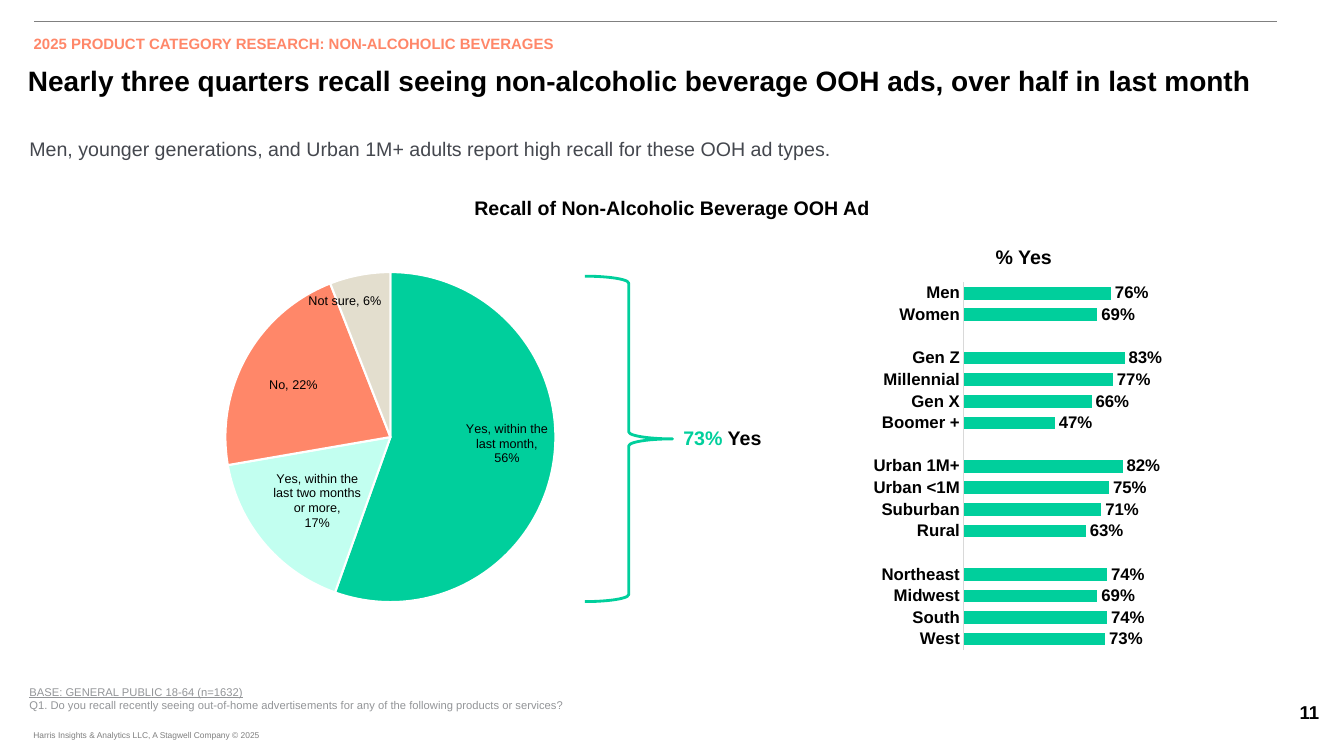
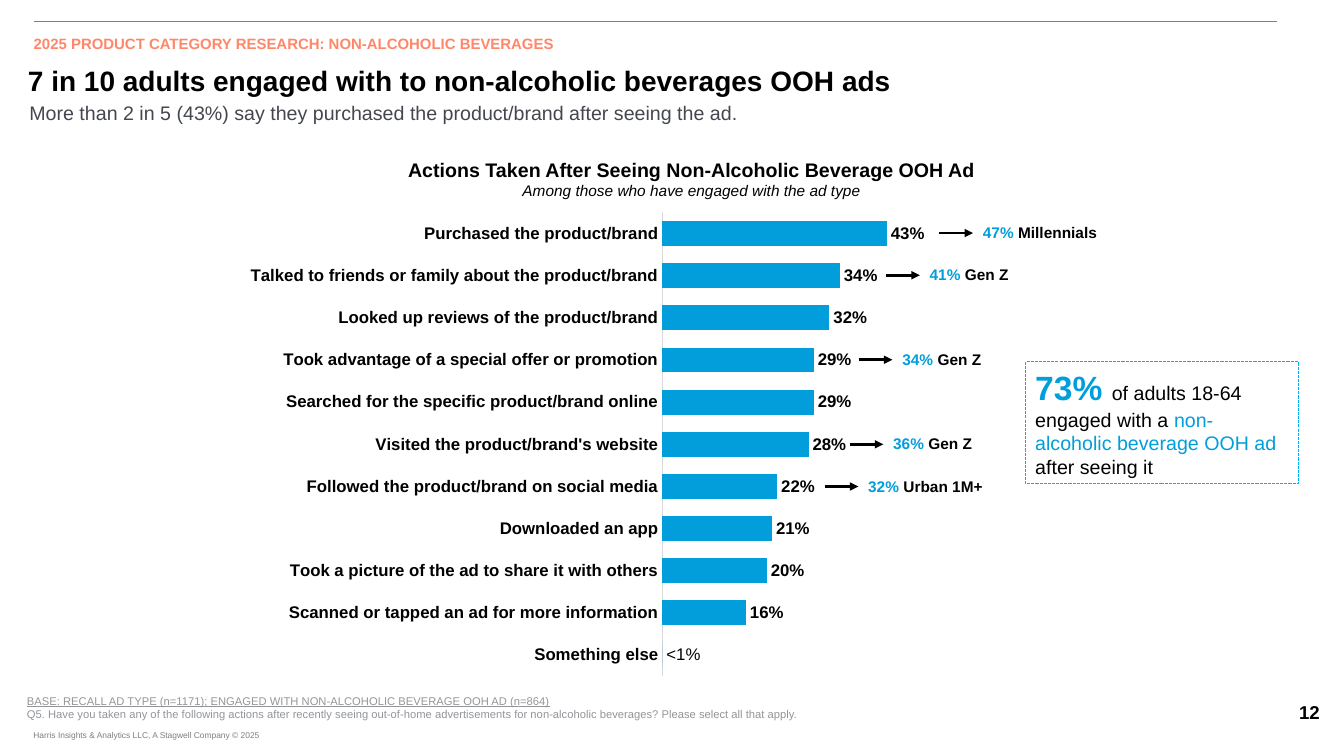
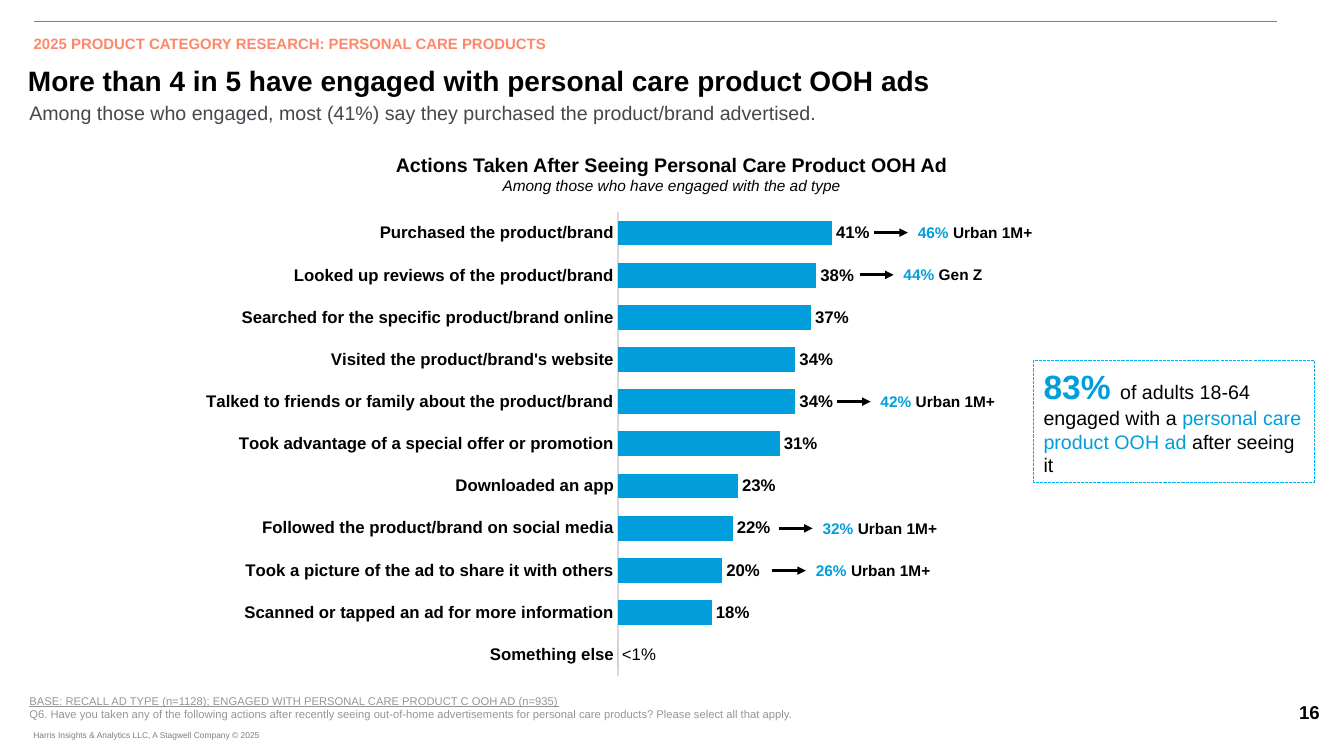
import pptx
import pptx.chart.data
import pptx.dml.color
import pptx.enum.chart
import pptx.enum.dml
import pptx.enum.shapes
import pptx.enum.text
import pptx.oxml
import pptx.oxml.ns
import pptx.util

Cm = pptx.util.Cm
Pt = pptx.util.Pt
RGBColor = pptx.dml.color.RGBColor
Align = pptx.enum.text.PP_ALIGN
Anchor = pptx.enum.text.MSO_ANCHOR
ChartType = pptx.enum.chart.XL_CHART_TYPE
LabelPosition = pptx.enum.chart.XL_LABEL_POSITION
Shape = pptx.enum.shapes.MSO_SHAPE

BLACK = RGBColor(0x00, 0x00, 0x00)
WHITE = RGBColor(0xFF, 0xFF, 0xFF)
SLATE = RGBColor(0x44, 0x47, 0x4E)
NOTE_GRAY = RGBColor(0x93, 0x95, 0x98)
FOOTER_GRAY = RGBColor(0x7F, 0x7F, 0x7F)
RULE_GRAY = RGBColor(0x80, 0x80, 0x80)
AXIS_GRAY = RGBColor(0xD9, 0xD9, 0xD9)
CORAL = RGBColor(0xFF, 0x87, 0x69)
GREEN = RGBColor(0x00, 0xCF, 0x9C)
MINT = RGBColor(0xC2, 0xFF, 0xF0)
SAND = RGBColor(0xE3, 0xDE, 0xCE)
BLUE = RGBColor(0x01, 0x9E, 0xDB)
BORDER_BLUE = RGBColor(0x00, 0xB0, 0xF0)

BASE = {"name": "Arial", "size": Pt(12), "bold": False, "color": BLACK}
TITLE = {"size": Pt(20), "bold": True}
KICKER = {"size": Pt(10.7), "bold": True, "color": CORAL}
SUBTITLE = {"size": Pt(14), "color": SLATE}
HEADING = {"size": Pt(14), "bold": True}
SUBHEADING = {"size": Pt(11), "italic": True}
NOTE = {"size": Pt(8), "color": NOTE_GRAY}
FOOTER = {"size": Pt(6), "color": FOOTER_GRAY}
NUMBER = {"size": Pt(13.3), "bold": True}
CHART_TEXT = {"bold": True}
PIE_TEXT = {"size": Pt(9)}
ARROW_TEXT = {"size": Pt(11), "bold": True}
BODY = {"size": Pt(14)}
BIG = {"size": Pt(24), "bold": True, "color": BLUE}


def format_font(font, formats):
    for key, value in {**BASE, **formats}.items():
        if key == "color":
            font.color.rgb = value
        else:
            setattr(font, key, value)


def manual_layout(**values):
    parts = "".join(f'<c:{key} val="{value}"/>' for key, value in values.items())
    return pptx.oxml.parse_xml(
        f'<c:layout {pptx.oxml.ns.nsdecls("c")}><c:manualLayout>{parts}</c:manualLayout></c:layout>')


class Report:
    def __init__(self):
        self.deck = pptx.Presentation()
        self.deck.slide_width, self.deck.slide_height = Cm(33.87), Cm(19.05)
        self.page = None

    def start_page(self, number, kicker, title, subtitle, subtitle_top):
        self.page = self.deck.slides.add_slide(self.deck.slide_layouts[5])
        heading = self.page.shapes.title
        heading.left, heading.top, heading.width, heading.height = map(Cm, (0.45, 1.52, 31.85, 1))
        self.fill_text(heading, [[(title, TITLE)]], anchor=Anchor.MIDDLE)
        self.line(0.86, 0.55, 32.18, 0.55, RULE_GRAY, 0.5)
        self.text((0.6, 0.74, 16.8, 0.71), [[(kicker, KICKER)]], anchor=Anchor.MIDDLE)
        self.text((0.49, subtitle_top, 31.67, 0.94), [[(subtitle, SUBTITLE)]])
        self.text((32.15, 17.53, 1.7, 0.84), [[(number, NUMBER)]], align=Align.CENTER)
        self.text((0.59, 18.27, 8, 0.51),
                  [[("Harris Insights & Analytics LLC, A Stagwell Company © 2025", FOOTER)]])

    def fill_text(self, box, paragraphs, align=Align.LEFT, anchor=Anchor.TOP):
        frame = box.text_frame
        settings = {"word_wrap": True, "auto_size": pptx.enum.text.MSO_AUTO_SIZE.NONE,
                    "vertical_anchor": anchor}
        for key, value in settings.items():
            setattr(frame, key, value)
        for index, spans in enumerate(paragraphs):
            para = frame.add_paragraph() if index else frame.paragraphs[0]
            para.alignment = align
            for words, formats in spans:
                span = para.add_run()
                span.text = words
                format_font(span.font, formats)

    def text(self, place, paragraphs, **settings):
        box = self.page.shapes.add_textbox(*map(Cm, place))
        self.fill_text(box, paragraphs, **settings)
        return box

    def heading(self, place, *paragraphs):
        self.text(place, [[item] for item in paragraphs], align=Align.CENTER)

    def notes(self, left, top, base, question):
        self.text((left, top, 32.8, 0.94),
                  [[(base, {**NOTE, "underline": True})], [(question, NOTE)]])

    def line(self, left, top, right, bottom, color, width):
        connector = self.page.shapes.add_connector(
            pptx.enum.shapes.MSO_CONNECTOR.STRAIGHT, *map(Cm, (left, top, right, bottom)))
        connector.line.color.rgb = color
        connector.line.width = Pt(width)
        connector._element.spPr.append(
            pptx.oxml.parse_xml(f'<a:effectLst {pptx.oxml.ns.nsdecls("a")}/>'))
        return connector

    def arrow_label(self, left, middle, share, group):
        end = left + 0.85
        box = self.text((end, middle - 0.37, 4.93, 0.74),
                        [[(share + " ", {**ARROW_TEXT, "color": BLUE}), (group, ARROW_TEXT)]])
        arrow = self.line(left, middle, end, middle, BLACK, 2)
        arrow.end_connect(box, 1)
        arrow.line._get_or_add_ln().append(
            pptx.oxml.parse_xml(f'<a:tailEnd {pptx.oxml.ns.nsdecls("a")} type="triangle"/>'))

    def outline(self, kind, place, color, width):
        shape = self.page.shapes.add_shape(kind, *map(Cm, place))
        shape.shadow.inherit = False
        shape.fill.background()
        shape.line.color.rgb = color
        shape.line.width = Pt(width)
        return shape

    def brace(self, place):
        shape = self.outline(Shape.RIGHT_BRACE, place, GREEN, 2)
        shape.adjustments[0], shape.adjustments[1] = 0.08, 0.5

    def callout(self, place, share, ad_type):
        shape = self.outline(Shape.RECTANGLE, place, BORDER_BLUE, 0.75)
        shape.line.dash_style = pptx.enum.dml.MSO_LINE.SQUARE_DOT
        shape.line._get_or_add_ln().set("cap", "sq")
        self.fill_text(shape, [[
            (share + " ", BIG), ("of adults 18-64 engaged with a ", BODY),
            (ad_type + " ", {**BODY, "color": BLUE}), ("after seeing it", BODY)]],
            anchor=Anchor.MIDDLE)

    def chart(self, kind, place, categories, values, plot_area):
        data = pptx.chart.data.CategoryChartData(number_format="0%")
        data.categories = categories
        data.add_series("Series 1", values)
        chart = self.page.shapes.add_chart(kind, *map(Cm, place), data).chart
        chart.has_title = chart.has_legend = False
        format_font(chart.font, CHART_TEXT)
        area = chart._chartSpace.xpath("c:chart/c:plotArea")[0]
        for blank in area.xpath("c:layout | .//c:cat//c:pt[not(string(c:v))]"):
            blank.getparent().remove(blank)
        left, top, width, height = plot_area
        area.insert(0, manual_layout(layoutTarget="inner", xMode="edge", yMode="edge",
                                     x=left, y=top, w=width, h=height))
        return chart

    def labels(self, series, position, formats, show_category=False):
        labels = series.data_labels
        settings = {"show_value": True, "show_category_name": show_category,
                    "number_format": "0%", "number_format_is_linked": False,
                    "position": position}
        for key, value in settings.items():
            setattr(labels, key, value)
        format_font(labels.font, formats)

    def point_label(self, point, words, position, formats):
        label = point.data_label
        label.text_frame.text = words
        for para in label.text_frame.paragraphs:
            for span in para.runs:
                format_font(span.font, formats)
        label.position = position

    def bars(self, place, rows, color, plot_area, maximum, reverse=False):
        categories, values = zip(*rows)
        chart = self.chart(ChartType.BAR_CLUSTERED, place, categories, values, plot_area)
        plot = chart.plots[0]
        plot.gap_width, plot.vary_by_categories = 70, False
        fill = plot.series[0].format.fill
        fill.solid()
        fill.fore_color.rgb = color
        self.labels(plot.series[0], LabelPosition.OUTSIDE_END, CHART_TEXT)
        axis = chart.category_axis
        axis.reverse_order = reverse
        axis.has_major_gridlines = False
        axis.major_tick_mark = axis.minor_tick_mark = pptx.enum.chart.XL_TICK_MARK.NONE
        axis.format.line.color.rgb = AXIS_GRAY
        axis.format.line.width = Pt(0.75)
        format_font(axis.tick_labels.font, CHART_TEXT)
        scale = chart.value_axis
        scale.minimum_scale, scale.maximum_scale = 0, maximum
        scale.has_major_gridlines = scale.visible = False
        return plot

    def pie(self, place, slices, plot_area):
        chart = self.chart(ChartType.PIE, place, [item[0] for item in slices],
                           [item[1] for item in slices], plot_area)
        series = chart.plots[0].series[0]
        self.labels(series, LabelPosition.CENTER, PIE_TEXT, show_category=True)
        for index, (_, _, color, words, across, down) in enumerate(slices):
            point = series.points[index]
            point.format.fill.solid()
            point.format.fill.fore_color.rgb = color
            point.format.line.color.rgb = WHITE
            point.format.line.width = Pt(1.5)
            self.point_label(point, words, LabelPosition.CENTER, PIE_TEXT)
            label = series._element.xpath(f"c:dLbls/c:dLbl[c:idx/@val='{index}']")[0]
            for layout in label.xpath("c:layout"):
                label.remove(layout)
            label.insert(1, manual_layout(x=across, y=down))

    def actions(self, left, top, rows, arrows):
        height = 11.71
        plot = self.bars((left, top, 29.54, height), rows, BLUE, (0.51, 0, 0.49, 1), 1.1, True)
        plot.overlap = -15
        self.point_label(plot.series[0].points[len(rows) - 1], "<1%",
                         LabelPosition.OUTSIDE_END, {})
        for row, start, share, group in arrows:
            self.arrow_label(start, top + (row + 0.5) * height / len(rows), share, group)


PURCHASED = "Purchased the product/brand"
TALKED = "Talked to friends or family about the product/brand"
REVIEWS = "Looked up reviews of the product/brand"
OFFER = "Took advantage of a special offer or promotion"
SEARCHED = "Searched for the specific product/brand online"
VISITED = "Visited the product/brand's website"
FOLLOWED = "Followed the product/brand on social media"
DOWNLOADED = "Downloaded an app"
PICTURE = "Took a picture of the ad to share it with others"
SCANNED = "Scanned or tapped an ad for more information"
OTHER = "Something else"
BEVERAGES = "2025 PRODUCT CATEGORY RESEARCH: NON-ALCOHOLIC BEVERAGES"
ENGAGED = "Among those who have engaged with the ad type"


def recall_page(report):
    report.start_page(
        "11", BEVERAGES,
        "Nearly three quarters recall seeing non-alcoholic beverage OOH ads, over half in last month",
        "Men, younger generations, and Urban 1M+ adults report high recall for these OOH ad types.",
        3.33)
    report.heading((6.4, 4.8, 21.08, 0.86), ("Recall of Non-Alcoholic Beverage OOH Ad", HEADING))
    report.notes(
        0.49, 17.14, "BASE: GENERAL PUBLIC 18-64 (n=1632)",
        "Q1. Do you recall recently seeing out-of-home advertisements for any of the following "
        "products or services?")
    report.bars((19.61, 6.72, 9.96, 9.96), [
        ("West", 0.73), ("South", 0.74), ("Midwest", 0.69), ("Northeast", 0.74), ("", None),
        ("Rural", 0.63), ("Suburban", 0.71), ("Urban <1M", 0.75), ("Urban 1M+", 0.82), ("", None),
        ("Boomer +", 0.47), ("Gen X", 0.66), ("Millennial", 0.77), ("Gen Z", 0.83), ("", None),
        ("Women", 0.69), ("Men", 0.76)], GREEN, (0.47, 0.04, 0.49, 0.93), 1)
    report.heading((22.74, 6.05, 6.12, 0.86), ("% Yes", HEADING))
    report.brace((14.74, 6.96, 2.21, 8.2))
    report.text((16.97, 10.62, 2.87, 0.86),
                [[("73%", {**HEADING, "color": GREEN}), (" Yes", HEADING)]])
    report.pie((3.49, 6.4, 12.7, 9.14), [
        ("Yes, within the last month", 0.56, GREEN,
         "Yes, within the\nlast month,\n56%", 0.07, -0.02),
        ("Yes, within the last two months or more", 0.17, MINT,
         "Yes, within the\nlast two months\nor more,\n17%", -0.02, 0.03),
        ("No", 0.22, CORAL, "No, 22%", -0.05, -0.03),
        ("Not sure", 0.06, SAND, "Not sure, 6%", -0.06, -0.15)], (0.17, 0.05, 0.66, 0.91))


def beverage_page(report):
    report.start_page(
        "12", BEVERAGES, "7 in 10 adults engaged with to non-alcoholic beverages OOH ads",
        "More than 2 in 5 (43%) say they purchased the product/brand after seeing the ad.", 2.41)
    report.heading((7.5, 3.85, 19.86, 1.37),
                   ("Actions Taken After Seeing Non-Alcoholic Beverage OOH Ad", HEADING),
                   (ENGAGED, SUBHEADING))
    report.notes(
        0.43, 17.37,
        "BASE: RECALL AD TYPE (n=1171); ENGAGED WITH NON-ALCOHOLIC BEVERAGE OOH AD (n=864)",
        "Q5. Have you taken any of the following actions after recently seeing out-of-home "
        "advertisements for non-alcoholic beverages? Please select all that apply.")
    report.actions(1.63, 5.34, [
        (PURCHASED, 0.43), (TALKED, 0.34), (REVIEWS, 0.32), (OFFER, 0.29), (SEARCHED, 0.29),
        (VISITED, 0.28), (FOLLOWED, 0.22), (DOWNLOADED, 0.21), (PICTURE, 0.2), (SCANNED, 0.16),
        (OTHER, 0)], [
        (0, 23.67, "47%", "Millennials"), (1, 22.33, "41%", "Gen Z"), (3, 21.64, "34%", "Gen Z"),
        (5, 21.41, "36%", "Gen Z"), (6, 20.78, "32%", "Urban 1M+")])
    report.callout((25.84, 9.12, 6.88, 3.07), "73%", "non-alcoholic beverage OOH ad")


def personal_care_page(report):
    report.start_page(
        "16", "2025 PRODUCT CATEGORY RESEARCH: PERSONAL CARE PRODUCTS",
        "More than 4 in 5 have engaged with personal care product OOH ads",
        "Among those who engaged, most (41%) say they purchased the product/brand advertised.", 2.41)
    report.heading((7, 3.73, 19.86, 1.37),
                   ("Actions Taken After Seeing Personal Care Product OOH Ad", HEADING),
                   (ENGAGED, SUBHEADING))
    report.notes(
        0.49, 17.37,
        "BASE: RECALL AD TYPE (n=1128); ENGAGED WITH PERSONAL CARE PRODUCT C OOH AD (n=935)",
        "Q6. Have you taken any of the following actions after recently seeing out-of-home "
        "advertisements for personal care products? Please select all that apply.")
    report.actions(0.51, 5.33, [
        (PURCHASED, 0.41), (REVIEWS, 0.38), (SEARCHED, 0.37), (VISITED, 0.34), (TALKED, 0.34),
        (OFFER, 0.31), (DOWNLOADED, 0.23), (FOLLOWED, 0.22), (PICTURE, 0.2), (SCANNED, 0.18),
        (OTHER, 0)], [
        (0, 22.03, "46%", "Urban 1M+"), (1, 21.67, "44%", "Gen Z"), (4, 21.09, "42%", "Urban 1M+"),
        (7, 19.63, "32%", "Urban 1M+"), (8, 19.46, "26%", "Urban 1M+")])
    report.callout((26.05, 9.08, 7.09, 3.07), "83%", "personal care product OOH ad")


def main():
    report = Report()
    for build_page in (recall_page, beverage_page, personal_care_page):
        build_page(report)
    report.deck.save("out.pptx")


if __name__ == "__main__":
    main()
